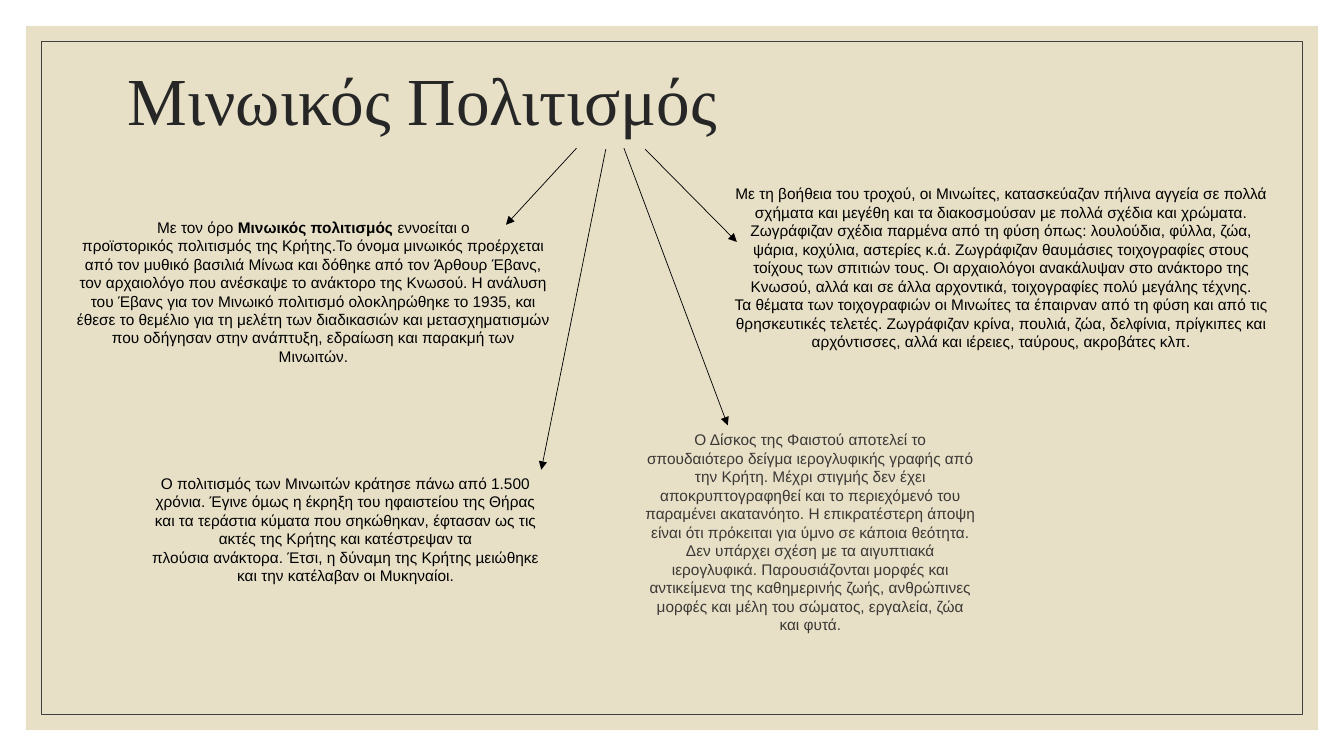
"""Build the slide on Minoan civilisation: a title with arrows to four notes."""
from dataclasses import dataclass

from pptx import Presentation
from pptx.dml.color import RGBColor
from pptx.enum.shapes import MSO_CONNECTOR, MSO_SHAPE
from pptx.enum.text import MSO_ANCHOR, PP_ALIGN
from pptx.oxml.ns import qn
from pptx.slide import Slide
from pptx.util import Pt
from lxml.etree import SubElement


@dataclass(frozen=True)
class Theme:
    """Colours, fonts and type sizes of the slide."""
    panel: str = "E7E0C7"
    frame: str = "404040"
    title: str = "262626"
    ink: str = "000000"
    soft: str = "3B3835"
    title_font: str = "Times New Roman"
    body_font: str = "Arial"
    title_size: float = 48
    body_size: float = 11
    hairline: float = 0.5


@dataclass(frozen=True)
class Run:
    """A stretch of text of one weight, where a tilde stands for a no-break space."""
    text: str
    bold: bool = False


@dataclass(frozen=True)
class TextBlock:
    """A text box and its paragraphs of runs."""
    box: tuple[float, float, float, float]
    paragraphs: tuple[tuple[Run, ...], ...]
    color: str
    font: str
    size: float
    align: PP_ALIGN = PP_ALIGN.CENTER
    anchor: MSO_ANCHOR = MSO_ANCHOR.TOP
    spacing: float = 1.0


@dataclass(frozen=True)
class Arrow:
    """A straight arrow from the title to a note."""
    start: tuple[float, float]
    end: tuple[float, float]


THEME = Theme()
WIDTH, HEIGHT = 960, 540
NO_BREAK_SPACE = chr(160)


def note(box: tuple[float, float, float, float], *paragraphs: tuple[Run, ...],
         color: str = THEME.ink) -> TextBlock:
    """Return a centred block in the body style."""
    return TextBlock(box, paragraphs, color, THEME.body_font, THEME.body_size)


BLOCKS = (
    TextBlock((84.24, 20.16, 792, 108), ((Run("Μινωικός Πολιτισμός"),),),
              THEME.title, THEME.title_font, THEME.title_size,
              PP_ALIGN.LEFT, MSO_ANCHOR.MIDDLE, 0.9),
    note((46.8, 151.92, 354.24, 143.28), (
        Run("Με τον όρο~"),
        Run("Μινωικός πολιτισμός", True),
        Run("~εννοείται ο προϊστορικός~πολιτισμός~της~Κρήτης.Το όνομα μινωικός "
            "προέρχεται από τον μυθικό βασιλιά~Μίνωα~και δόθηκε από τον~Άρθουρ Έβανς, "
            "τον αρχαιολόγο που ανέσκαψε το ανάκτορο της~Κνωσού. Η ανάλυση του Έβανς "
            "για τον Μινωικό πολιτισμό ολοκληρώθηκε το~1935, και έθεσε το θεμέλιο για "
            "τη μελέτη των διαδικασιών και μετασχηματισμών που οδήγησαν στην ανάπτυξη, "
            "εδραίωση και παρακμή των Μινωιτών."))),
    note((514.08, 128.16, 402.48, 127.44), (
        Run("Με τη βοήθεια του τροχού, οι Μινωίτες, κατασκεύαζαν πήλινα~αγγεία~σε πολλά "
            "σχήµατα και µεγέθη και τα διακοσµούσαν µε πολλά σχέδια και χρώματα. "
            "Ζωγράφιζαν σχέδια παρµένα από τη φύση όπως: λουλούδια, φύλλα, ζώα, ψάρια, "
            "κοχύλια, αστερίες κ.ά. Ζωγράφιζαν θαυµάσιες~τοιχογραφίες~στους τοίχους των "
            "σπιτιών τους. Οι αρχαιολόγοι ανακάλυψαν στο ανάκτορο της Κνωσού, αλλά και "
            "σε άλλα αρχοντικά, τοιχογραφίες πολύ µεγάλης τέχνης. Τα~θέµατα~των "
            "τοιχογραφιών οι Μινωίτες τα έπαιρναν~από τη φύση και από τις θρησκευτικές "
            "τελετές.~Ζωγράφιζαν κρίνα, πουλιά, ζώα, δελφίνια, πρίγκιπες και "
            "αρχόντισσες, αλλά και ιέρειες, ταύρους, ακροβάτες κλπ."),)),
    note((97.2, 334.8, 299.52, 108.72), (
        Run("Ο πολιτισµός των Μινωιτών κράτησε πάνω από 1.500 χρόνια. Έγινε όµως η "
            "έκρηξη του~ηφαιστείου της Θήρας και τα τεράστια κύµατα που σηκώθηκαν, "
            "έφτασαν ως τις ακτές της Κρήτης και κατέστρεψαν τα"),), (
        Run("πλούσια ανάκτορα. Έτσι, η δύναµη της Κρήτης µειώθηκε και την κατέλαβαν "
            "οι Μυκηναίοι."),)),
    note((453.6, 303.84, 250.56, 154.08), (
        Run("Ο Δίσκος της Φαιστού αποτελεί το σπουδαιότερο δείγμα ιερογλυφικής γραφής "
            "από την Κρήτη. Μέχρι στιγμής δεν έχει αποκρυπτογραφηθεί και το περιεχόμενό "
            "του παραμένει ακατανόητο. Η επικρατέστερη άποψη είναι ότι πρόκειται για "
            "ύμνο σε κάποια θεότητα. Δεν υπάρχει σχέση με τα αιγυπτιακά ιερογλυφικά. "
            "Παρουσιάζονται μορφές και αντικείμενα της καθημερινής ζωής, ανθρώπινες "
            "μορφές και μέλη του σώματος, εργαλεία, ζώα και φυτά."),),
         color=THEME.soft),
)

ARROWS = (
    Arrow((411.84, 105.84), (361.44, 160.56)),
    Arrow((432.72, 106.56), (386.64, 335.52)),
    Arrow((445.68, 105.84), (519.84, 303.84)),
    Arrow((460.8, 106.56), (526.32, 172.8)),
)


def add_panel(s: Slide, margin: float, fill: str = "", line: str = "") -> None:
    """Add a rectangle set in from the slide edges by an equal margin."""
    sp = s.shapes.add_shape(MSO_SHAPE.RECTANGLE, Pt(margin), Pt(margin),
                            Pt(WIDTH - 2 * margin), Pt(HEIGHT - 2 * margin))
    sp.shadow.inherit = False
    if fill:
        sp.fill.solid()
        sp.fill.fore_color.rgb = RGBColor.from_string(fill)
    else:
        sp.fill.background()
    if line:
        sp.line.color.rgb = RGBColor.from_string(line)
        sp.line.width = Pt(THEME.hairline)
    else:
        sp.line.fill.background()


def add_block(s: Slide, block: TextBlock) -> None:
    """Add a text box with its formatted paragraphs."""
    tf = s.shapes.add_textbox(*map(Pt, block.box)).text_frame
    for name, value in {"word_wrap": True, "vertical_anchor": block.anchor}.items():
        setattr(tf, name, value)
    for i, runs in enumerate(block.paragraphs):
        p = tf.add_paragraph() if i else tf.paragraphs[0]
        for name, value in {"alignment": block.align,
                            "line_spacing": block.spacing}.items():
            setattr(p, name, value)
        for run in runs:
            r = p.add_run()
            r.text = run.text.replace("~", NO_BREAK_SPACE)
            r.font.color.rgb = RGBColor.from_string(block.color)
            for name, value in {"name": block.font, "size": Pt(block.size),
                                "bold": run.bold}.items():
                setattr(r.font, name, value)


def add_arrow(s: Slide, arrow: Arrow) -> None:
    """Add a thin connector with a triangle at its end."""
    cx = s.shapes.add_connector(MSO_CONNECTOR.STRAIGHT,
                                *map(Pt, arrow.start + arrow.end))
    cx.line.color.rgb = RGBColor.from_string(THEME.ink)
    cx.line.width = Pt(THEME.hairline)
    SubElement(cx.line._get_or_add_ln(), qn("a:tailEnd"), type="triangle")
    SubElement(cx._element.spPr, qn("a:effectLst"))


def main() -> None:
    """Build and save the slide."""
    prs = Presentation()
    prs.slide_width, prs.slide_height = Pt(WIDTH), Pt(HEIGHT)
    s = prs.slides.add_slide(prs.slide_layouts[6])
    add_panel(s, 18.5, fill=THEME.panel)
    add_panel(s, 29.4, line=THEME.frame)
    for block in BLOCKS:
        add_block(s, block)
    for arrow in ARROWS:
        add_arrow(s, arrow)
    prs.save("out.pptx")


if __name__ == "__main__":
    main()
